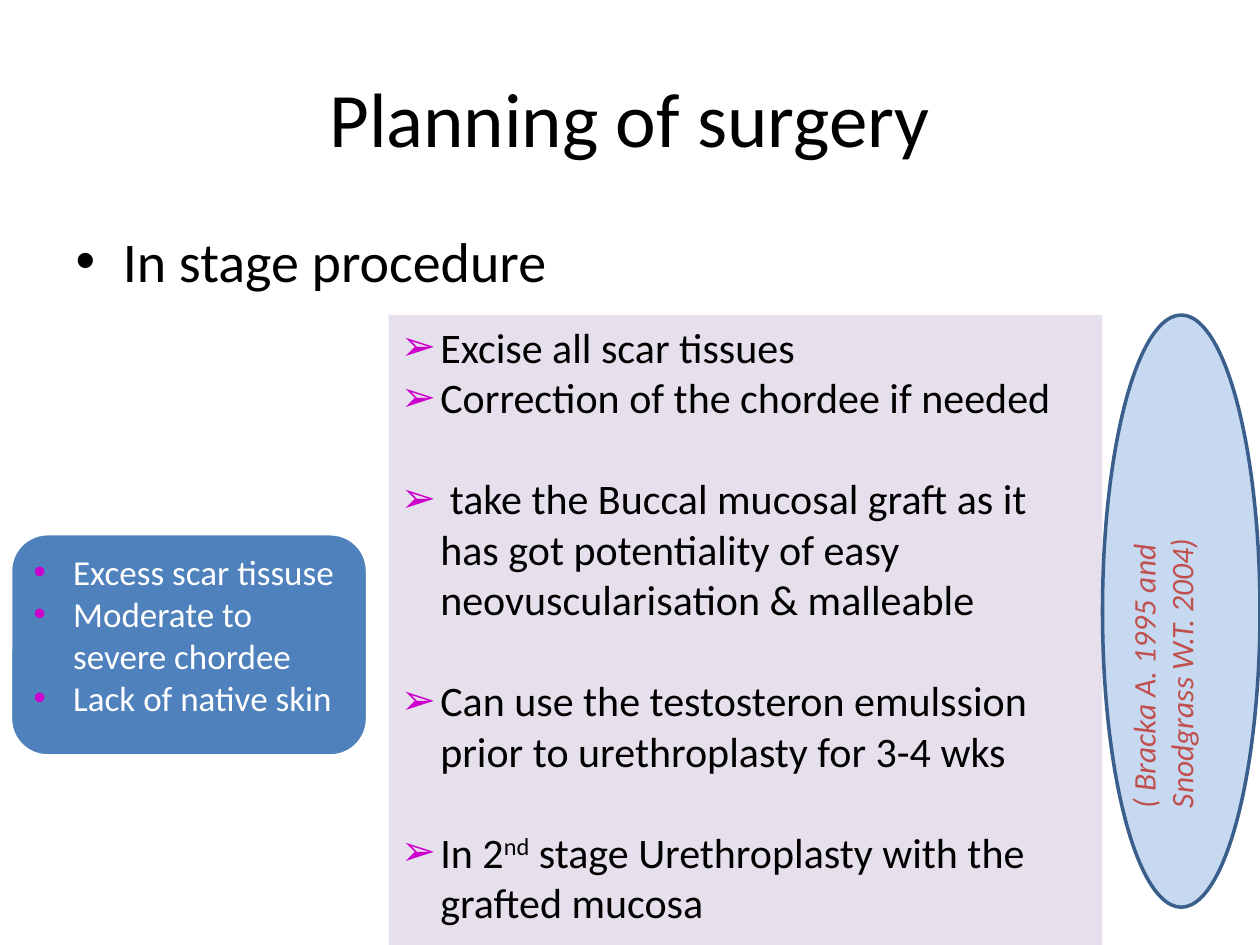
from collections import namedtuple
from dataclasses import dataclass

from lxml import etree
from pptx import Presentation
from pptx.dml.color import RGBColor
from pptx.enum import shapes, text
from pptx.oxml import ns
from pptx.util import Pt

Box = namedtuple("Box", "x y w h")


@dataclass(frozen=True)
class Theme:
    font: str = "Calibri"
    ink: str = "000000"
    white: str = "FFFFFF"
    mark: str = "CC00CC"
    lilac: str = "E6E0EC"
    blue: str = "4F81BD"
    sky: str = "C6D9F1"
    navy: str = "3A5F8C"
    red: str = "C0504D"
    head: int = 44
    lead: int = 32
    step: int = 24
    sign: int = 20
    cite: int = 18
    line: int = 2


T = Theme()
GAP = 29  # one line of step text
STEPS = [  # space before, runs as (words, raised)
    (0, [("Excise all scar tissues", False)]),
    (0, [("Correction of the chordee if needed", False)]),
    (GAP, [(" take the Buccal mucosal graft as it has got potentiality "
            "of easy neovuscularisation & malleable", False)]),
    (GAP, [("Can use the testosteron emulssion prior to urethroplasty "
            "for 3-4 wks", False)]),
    (GAP, [("In 2", False), ("nd", True),
           (" stage Urethroplasty with the grafted mucosa", False)]),
]
SIGNS = ["Excess scar tissuse", "Moderate to severe chordee",
         "Lack of native skin"]


def color(code):
    return RGBColor.from_string(code)


def place(shape, box):
    shape.left, shape.top, shape.width, shape.height = map(Pt, box)


def add_run(para, words, size, ink, italic=None, raised=False):
    run = para.add_run()
    run.text = words
    font = run.font
    font.name, font.size, font.italic = T.font, Pt(size), italic
    font.color.rgb = color(ink)
    if raised:
        font._element.set("baseline", "30000")


def add_mark(para, char, ink, indent):
    """Give the paragraph a bullet and a hanging indent."""
    props = para._p.get_or_add_pPr()
    props.set("marL", str(Pt(indent)))
    props.set("indent", str(-Pt(indent)))
    tint = etree.SubElement(props, ns.qn("a:buClr"))
    etree.SubElement(tint, ns.qn("a:srgbClr"), val=ink)
    etree.SubElement(props, ns.qn("a:buFont"), typeface="Arial")
    etree.SubElement(props, ns.qn("a:buChar"), char=char)


def add_form(slide, kind, box, fill, line=None):
    """Add a flat shape and return it."""
    form = slide.shapes.add_shape(kind, *map(Pt, box))
    form.shadow.inherit = False
    form.fill.solid()
    form.fill.fore_color.rgb = color(fill)
    if line:
        form.line.color.rgb = color(line)
        form.line.width = Pt(T.line)
    else:
        form.line.fill.background()
    form.text_frame.word_wrap = True
    return form


def add_list(frame, items, char, size, ink):
    frame.vertical_anchor = text.MSO_ANCHOR.TOP
    for i, (gap, runs) in enumerate(items):
        para = frame.add_paragraph() if i else frame.paragraphs[0]
        para.alignment = text.PP_ALIGN.LEFT
        para.space_before = Pt(gap)
        add_mark(para, char, T.mark, 22.5)
        for words, raised in runs:
            add_run(para, words, size, ink, raised=raised)


def add_title(slide, box):
    title = slide.shapes.title
    place(title, box)
    title.text_frame.vertical_anchor = text.MSO_ANCHOR.MIDDLE
    para = title.text_frame.paragraphs[0]
    para.alignment = text.PP_ALIGN.CENTER
    add_run(para, "Planning of surgery", T.head, T.ink)


def add_lead(slide, box):
    body = slide.placeholders[1]
    place(body, box)
    para = body.text_frame.paragraphs[0]
    add_mark(para, "•", T.ink, 27)
    add_run(para, "In stage procedure", T.lead, T.ink)


def add_steps(slide, box):
    form = add_form(slide, shapes.MSO_SHAPE.RECTANGLE, box, T.lilac)
    add_list(form.text_frame, STEPS, "➢", T.step, T.ink)


def add_signs(slide, box):
    form = add_form(slide, shapes.MSO_SHAPE.ROUNDED_RECTANGLE, box,
                    T.blue, T.white)
    items = [(0, [(words, False)]) for words in SIGNS]
    add_list(form.text_frame, items, "•", T.sign, T.white)


def add_cite(slide, box):
    """Stand a wide oval on end inside the tall box."""
    wide = Box(box.x + (box.w - box.h) / 2, box.y + (box.h - box.w) / 2,
               box.h, box.w)
    oval = add_form(slide, shapes.MSO_SHAPE.OVAL, wide, T.sky, T.navy)
    oval.rotation = 270
    frame = oval.text_frame
    frame.vertical_anchor = text.MSO_ANCHOR.MIDDLE
    frame.margin_bottom = Pt(25.6)
    para = frame.paragraphs[0]
    para.alignment = text.PP_ALIGN.LEFT
    add_run(para, "( Bracka A. 1995 and Snodgrass W.T. 2004)",
            T.cite, T.red, italic=True)


def main():
    deck = Presentation()
    deck.slide_width, deck.slide_height = Pt(720), Pt(540)
    slide = deck.slides.add_slide(deck.slide_layouts[1])
    add_title(slide, Box(36, 21.6, 648, 90))
    add_lead(slide, Box(36, 126, 648, 356.4))
    add_steps(slide, Box(222, 180, 408, 385))
    add_signs(slide, Box(6, 305, 204, 127))
    add_cite(slide, Box(630, 180, 90, 338.4))
    deck.save("out.pptx")


if __name__ == "__main__":
    main()
